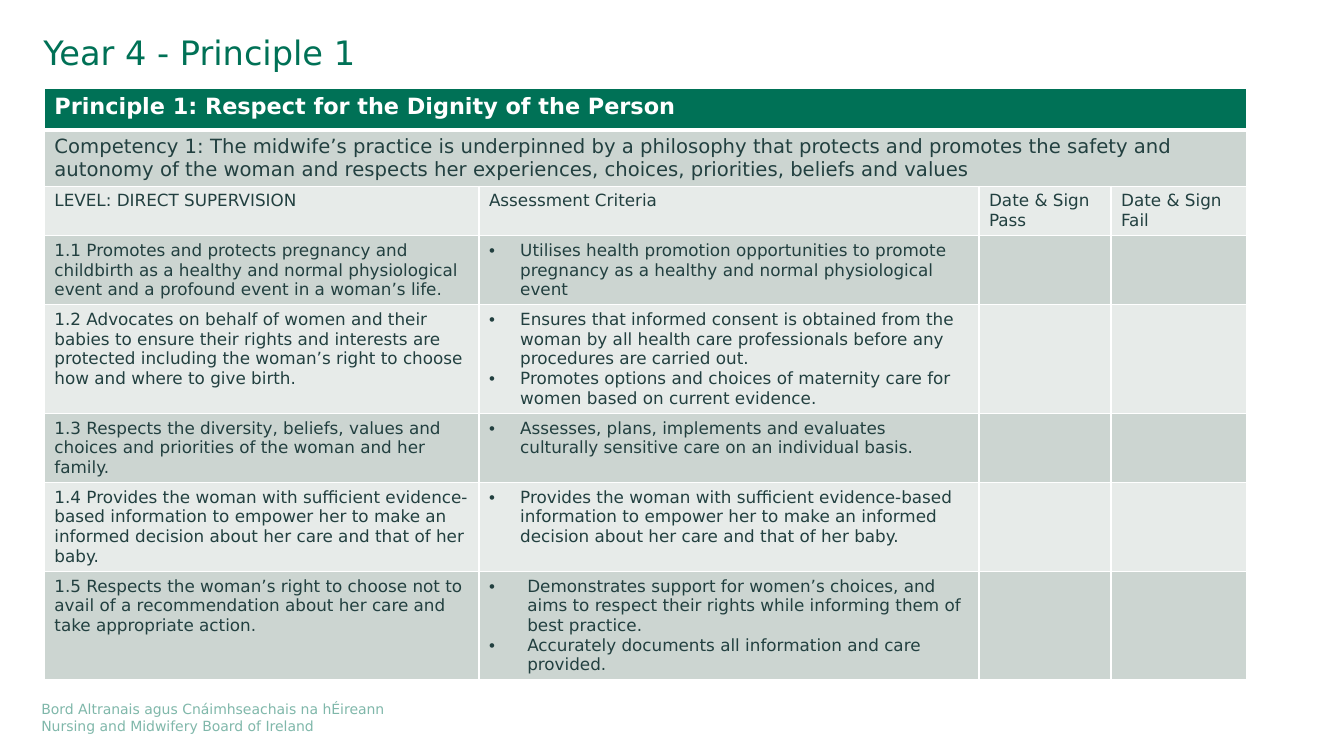
from lxml.etree import SubElement
from pptx import Presentation
from pptx.dml.color import RGBColor
from pptx.enum.text import MSO_ANCHOR, MSO_AUTO_SIZE, PP_ALIGN
from pptx.oxml.ns import qn
from pptx.util import Inches, Pt

# Content
TITLE = "Year 4 - Principle 1"
FOOTER = ["Bord Altranais agus Cnáimhseachais na hÉireann",
          "Nursing and Midwifery Board of Ireland"]
PRINCIPLE = "Principle 1: Respect for the Dignity of the Person"
COMPETENCY = ("Competency 1: The midwife’s practice is underpinned by a philosophy that protects "
              "and promotes the safety and autonomy of the woman and respects her experiences, "
              "choices, priorities, beliefs and values")
HEADINGS = [["LEVEL: DIRECT SUPERVISION"], ["Assessment Criteria"],
            ["Date & Sign", "Pass"], ["Date & Sign", "Fail"]]
# Each competency: statement, criteria, bullet indent in inches
COMPETENCIES = [
    ("1.1 Promotes and protects pregnancy and childbirth as a healthy and normal physiological "
     "event and a profound event in a woman’s life.",
     ["Utilises health promotion opportunities to promote pregnancy as a healthy and normal "
      "physiological event"], 0.31),
    ("1.2 Advocates on behalf of women and their babies to ensure their rights and interests are "
     "protected including the woman’s right to choose how and where to give birth.",
     ["Ensures that informed consent is obtained from the woman by all health care professionals "
      "before any procedures are carried out.",
      "Promotes options and choices of maternity care for women based on current evidence."], 0.31),
    ("1.3 Respects the diversity, beliefs, values and choices and priorities of the woman and her "
     "family.",
     ["Assesses, plans, implements and evaluates culturally sensitive care on an individual "
      "basis."], 0.31),
    ("1.4 Provides the woman with sufficient evidence-based information to empower her to make an "
     "informed decision about her care and that of her baby.",
     ["Provides the woman with sufficient evidence-based information to empower her to make an "
      "informed decision about her care and that of her baby."], 0.31),
    ("1.5 Respects the woman’s right to choose not to avail of a recommendation about her care and "
     "take appropriate action.",
     ["Demonstrates support for women’s choices, and aims to respect their rights while informing "
      "them of best practice.",
      "Accurately documents all information and care provided."], 0.38),
]

# Style and grid
COLORS = {"green": "007156", "text": "224040", "white": "FFFFFF",
          "dark band": "CCD5D1", "light band": "E7EBE9"}
FONT = "DejaVu Sans"
COLUMN_WIDTHS = [4.31, 4.96, 1.31, 1.34]
ROW_HEIGHT = 0.41
TABLE_LEFT, TABLE_TOP, TABLE_HEIGHT = 0.44, 0.88, 5.97


def write_lines(frame, lines, size, color, bold=False, indent=0):
    for index, line in enumerate(lines):
        paragraph = frame.paragraphs[0] if index == 0 else frame.add_paragraph()
        paragraph.text = line
        if indent:
            properties = paragraph._p.get_or_add_pPr()
            properties.set("marL", str(Inches(indent)))
            properties.set("indent", str(-Inches(indent)))
            SubElement(properties, qn("a:buFont"), typeface="Arial")
            SubElement(properties, qn("a:buChar"), char="•")
        font = paragraph.font
        font.name, font.size, font.bold = FONT, Pt(size), bold
        font.color.rgb = RGBColor.from_string(COLORS[color])


def clear_margins(frame):
    frame.margin_left = frame.margin_top = frame.margin_right = frame.margin_bottom = 0
    frame.word_wrap = True


def style_cell(cell, fill, top=1, bottom=1):
    properties = cell._tc.get_or_add_tcPr()
    for side, width in (("L", 1), ("R", 1), ("T", top), ("B", bottom)):
        line = SubElement(properties, qn(f"a:ln{side}"), w=str(Pt(width)))
        SubElement(SubElement(line, qn("a:solidFill")), qn("a:srgbClr"), val=COLORS["white"])
    cell.fill.solid()
    cell.fill.fore_color.rgb = RGBColor.from_string(COLORS[fill])


presentation = Presentation()
presentation.slide_width, presentation.slide_height = Inches(13.33), Inches(7.5)
slide = presentation.slides.add_slide(presentation.slide_layouts[5])

# Title
title = slide.shapes.title
title.left, title.top, title.width, title.height = map(Inches, (0.43, 0.36, 12.46, 0.52))
clear_margins(title.text_frame)
title.text_frame.auto_size = MSO_AUTO_SIZE.NONE
title.text_frame.vertical_anchor = MSO_ANCHOR.TOP
write_lines(title.text_frame, [TITLE], 24, "green")
title.text_frame.paragraphs[0].alignment = PP_ALIGN.LEFT
title.text_frame.paragraphs[0].line_spacing = 0.9

# Table grid
row_count = len(COMPETENCIES) + 3
table_frame = slide.shapes.add_table(row_count, len(COLUMN_WIDTHS), Inches(TABLE_LEFT),
                                     Inches(TABLE_TOP), Inches(sum(COLUMN_WIDTHS)),
                                     Inches(TABLE_HEIGHT))
table = table_frame.table
for column, width in zip(table.columns, COLUMN_WIDTHS):
    column.width = Inches(width)
for row_index, row in enumerate(table.rows):
    row.height = Inches(ROW_HEIGHT)
    band = "green" if row_index == 0 else "dark band" if row_index % 2 else "light band"
    for cell in row.cells:
        style_cell(cell, band, top=3 if row_index == 1 else 1, bottom=3 if row_index == 0 else 1)
table_frame.height = Inches(TABLE_HEIGHT)

# Table text
for row_index in (0, 1):
    table.cell(row_index, 0).merge(table.cell(row_index, len(COLUMN_WIDTHS) - 1))
write_lines(table.cell(0, 0).text_frame, [PRINCIPLE], 16, "white", bold=True)
write_lines(table.cell(1, 0).text_frame, [COMPETENCY], 14, "text")
for column_index, heading in enumerate(HEADINGS):
    write_lines(table.cell(2, column_index).text_frame, heading, 12, "text")
for row_index, (statement, criteria, indent) in enumerate(COMPETENCIES, start=3):
    write_lines(table.cell(row_index, 0).text_frame, [statement], 12, "text")
    write_lines(table.cell(row_index, 1).text_frame, criteria, 12, "text", indent=indent)

# Footer in half-transparent green
footer = slide.shapes.add_textbox(*map(Inches, (0.41, 6.95, 4.39, 0.34)))
clear_margins(footer.text_frame)
write_lines(footer.text_frame, FOOTER, 10, "green")
for color in footer._element.iter(qn("a:srgbClr")):
    SubElement(color, qn("a:alpha"), val="50000")

presentation.save("out.pptx")
